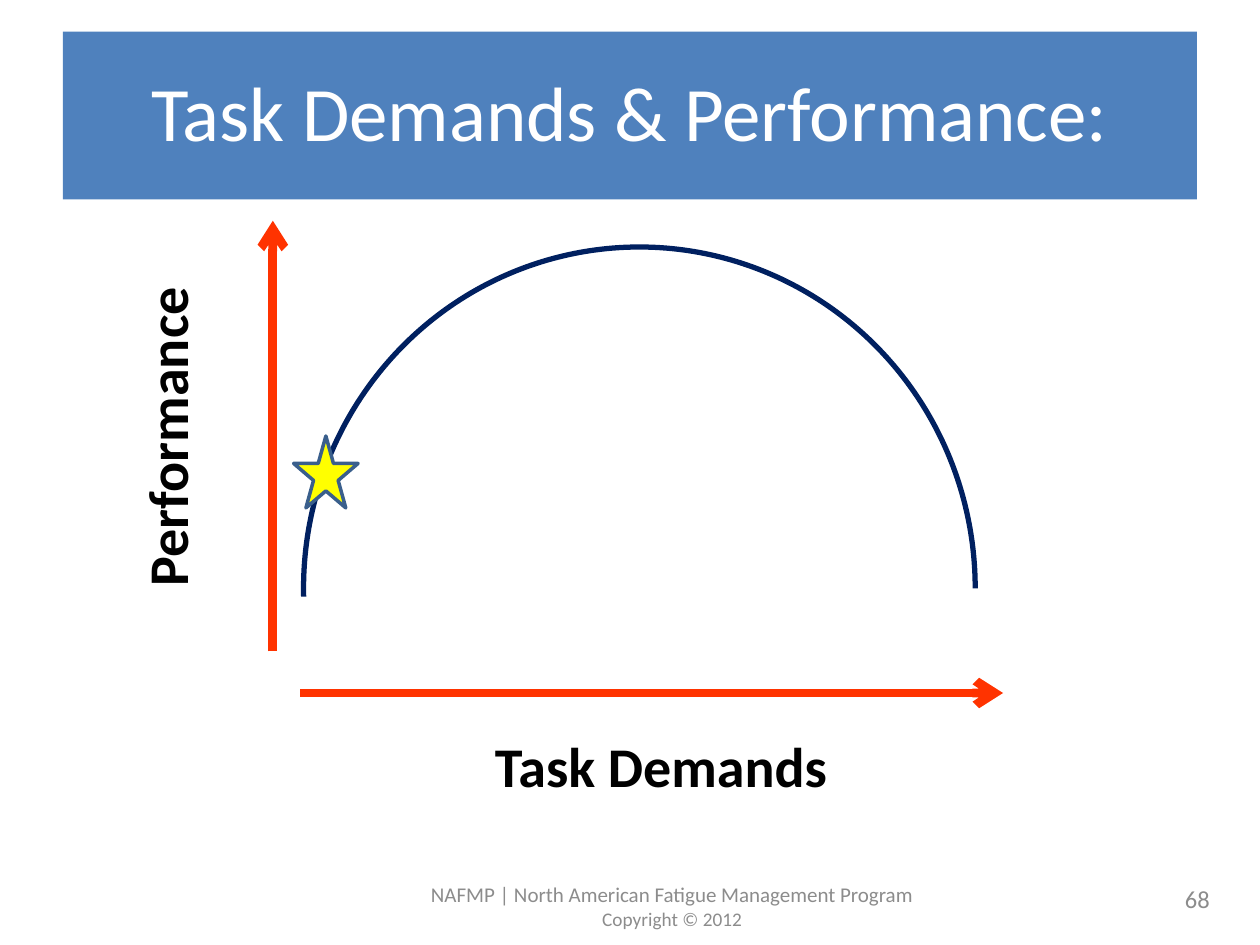
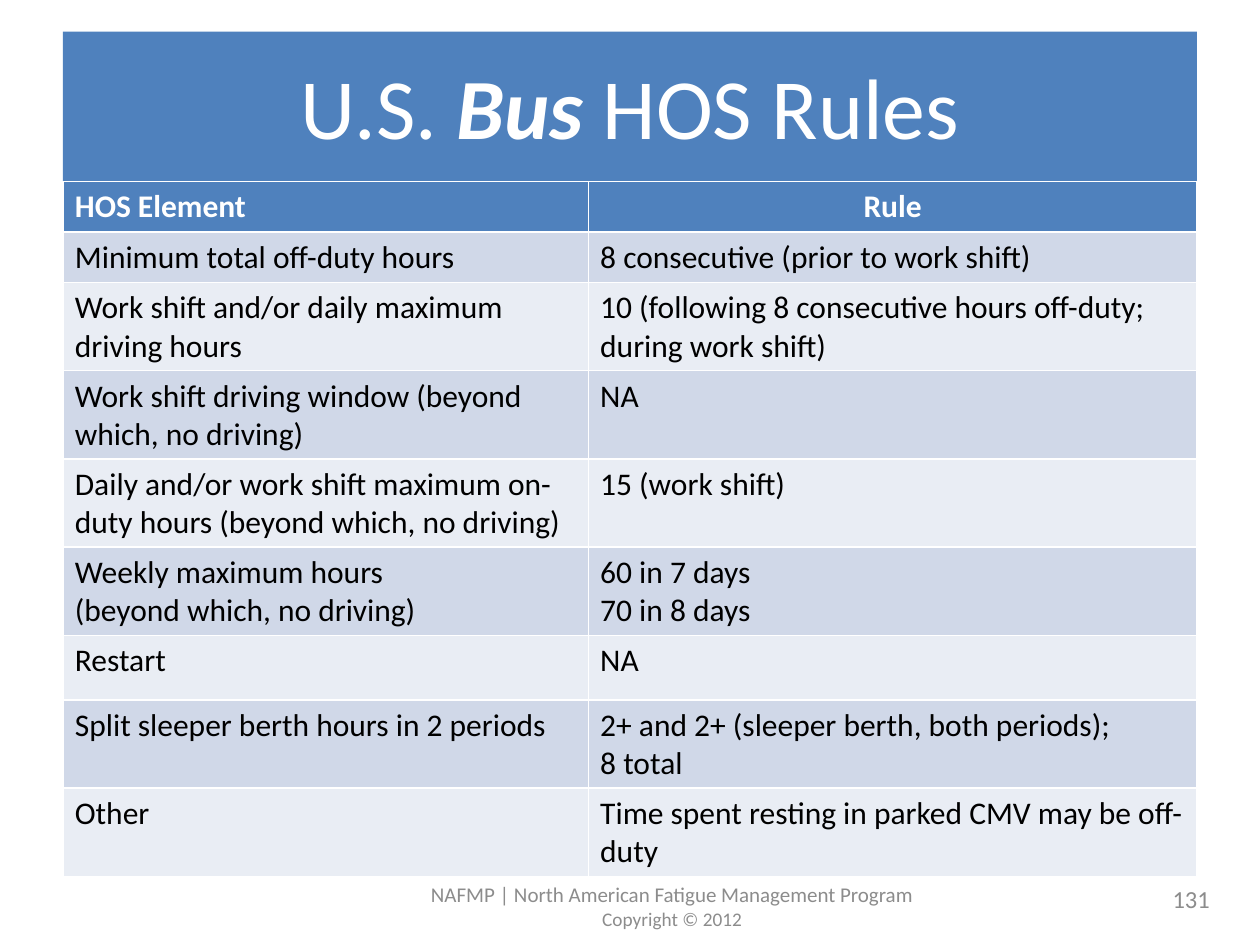
"""Build two fatigue management slides: a performance curve and a table of bus rules."""
from dataclasses import dataclass

from lxml.etree import SubElement
from pptx import Presentation
from pptx.dml.color import RGBColor
from pptx.enum.shapes import MSO_CONNECTOR, MSO_SHAPE
from pptx.enum.text import MSO_ANCHOR, PP_ALIGN
from pptx.oxml.ns import qn
from pptx.util import Cm, Pt


@dataclass(frozen=True)
class Theme:
    font: str = "Calibri"
    band: str = "4F81BD"
    white: str = "FFFFFF"
    black: str = "000000"
    grey: str = "8C8C8C"
    curve: str = "002060"
    axis: str = "FF3300"
    star: str = "FFFF00"
    star_edge: str = "3A5F8C"
    row_fills: tuple = ("D0D8E8", "E9EDF4")
    title_size: float = 44
    large_title_size: float = 49
    label_size: float = 32
    table_size: float = 18
    number_size: float = 14
    footer_size: float = 12
    copyright_size: float = 11
    title_leading: float = 45.8


THEME = Theme()
MARGIN = 1.27
CONTENT_WIDTH = 22.86
ONE_LINE, TALL_LINE, TWO_LINES = 0.97, 1.3, 1.7

BUS_RULES = [
    (ONE_LINE, "Minimum total off-duty hours", "8 consecutive (prior to work shift)"),
    (TWO_LINES, "Work shift and/or daily maximum driving hours",
     "10 (following 8 consecutive hours off-duty; during work shift)"),
    (TWO_LINES, "Work shift driving window (beyond which, no driving)", "NA"),
    (TWO_LINES, "Daily and/or work shift maximum on-duty hours (beyond which, no driving)",
     "15 (work shift)"),
    (TWO_LINES, "Weekly maximum hours\n(beyond which, no driving)", "60 in 7 days\n70 in 8 days"),
    (TALL_LINE, "Restart", "NA"),
    (TWO_LINES, "Split sleeper berth hours in 2 periods",
     "2+ and 2+ (sleeper berth, both periods);\n8 total"),
    (TWO_LINES, "Other", "Time spent resting in parked CMV may be off-duty"),
]


def color(code):
    return RGBColor.from_string(code)


def style_paragraph(paragraph, size, font_color, align=PP_ALIGN.LEFT, bold=False):
    paragraph.alignment = align
    font = paragraph.font
    font.name, font.size, font.bold = THEME.font, Pt(size), bold
    font.color.rgb = color(font_color)


def add_text(slide, box, text, size, font_color, align=PP_ALIGN.CENTER,
             anchor=MSO_ANCHOR.MIDDLE, bold=False):
    shape = slide.shapes.add_textbox(*map(Cm, box))
    frame = shape.text_frame
    frame.word_wrap = True
    frame.vertical_anchor = anchor
    frame.text = text
    for paragraph in frame.paragraphs:
        style_paragraph(paragraph, size, font_color, align, bold)
    return shape


def add_preset(slide, kind, box, fill=None, line=None, width=0):
    shape = slide.shapes.add_shape(kind, *map(Cm, box))
    shape.shadow.inherit = False
    if fill:
        shape.fill.solid()
        shape.fill.fore_color.rgb = color(fill)
    else:
        shape.fill.background()
    if line:
        shape.line.color.rgb = color(line)
        shape.line.width = Pt(width)
    else:
        shape.line.fill.background()
    return shape


def add_axis(slide, start, end):
    connector = slide.shapes.add_connector(MSO_CONNECTOR.STRAIGHT, *map(Cm, start + end))
    connector.line.color.rgb = color(THEME.axis)
    connector.line.width = Pt(5)
    properties = connector.element.spPr
    SubElement(properties.find(qn("a:ln")), qn("a:tailEnd"), type="arrow")
    SubElement(properties, qn("a:effectLst"))


def add_axis_label(slide, box, text, vertical=False):
    shape = add_text(slide, box, text, THEME.label_size, THEME.black,
                     anchor=MSO_ANCHOR.TOP, bold=True)
    if vertical:
        shape.element.txBody.bodyPr.set("vert", "vert270")


def add_base_slide(presentation, number):
    slide = presentation.slides.add_slide(presentation.slide_layouts[6])
    add_preset(slide, MSO_SHAPE.RECTANGLE, (MARGIN, 0.64, CONTENT_WIDTH, 3.38), THEME.band)
    footer = add_text(slide, (7.62, 17.78, 11.86, 0.97),
                      "NAFMP | North American Fatigue Management Program\nCopyright © 2012",
                      THEME.footer_size, THEME.grey)
    footer.text_frame.paragraphs[1].font.size = Pt(THEME.copyright_size)
    add_text(slide, (18.72, 17.6, 5.92, 1.02), str(number), THEME.number_size,
             THEME.grey, PP_ALIGN.RIGHT)
    return slide


def add_title(slide, text, size, emphasis=None):
    shape = add_text(slide, (MARGIN, 0.76, CONTENT_WIDTH, 3.18), "", size, THEME.white)
    paragraph = shape.text_frame.paragraphs[0]
    paragraph.line_spacing = Pt(THEME.title_leading)
    before, strong, after = text.partition(emphasis) if emphasis else (text, "", "")
    for part in filter(None, (before, strong, after)):
        run = paragraph.add_run()
        run.text = part
        if part == emphasis:
            run.font.bold = run.font.italic = True


def fill_cell(cell, text, fill, font_color, align=PP_ALIGN.LEFT, bold=False):
    cell.fill.solid()
    cell.fill.fore_color.rgb = color(fill)
    cell.margin_left = cell.margin_right = Cm(0.24)
    cell.text = text
    for paragraph in cell.text_frame.paragraphs:
        style_paragraph(paragraph, THEME.table_size, font_color, align, bold)


def add_rules_table(slide, top, column_widths, headings, rules):
    heights = [ONE_LINE] + [height for height, *_ in rules]
    frame = slide.shapes.add_table(len(heights), len(column_widths), Cm(MARGIN), Cm(top),
                                   Cm(sum(column_widths)), Cm(sum(heights)))
    table = frame.table
    for column, width in zip(table.columns, column_widths):
        column.width = Cm(width)
    for row, height in zip(table.rows, heights):
        row.height = Cm(height)
    for index, (heading, align) in enumerate(zip(headings, (PP_ALIGN.LEFT, PP_ALIGN.CENTER))):
        fill_cell(table.cell(0, index), heading, THEME.band, THEME.white, align, True)
    for row_index, (_, *texts) in enumerate(rules, start=1):
        fill = THEME.row_fills[(row_index - 1) % 2]
        for column_index, text in enumerate(texts):
            fill_cell(table.cell(row_index, column_index), text, fill, THEME.black)


def build_performance_slide(presentation):
    slide = add_base_slide(presentation, 68)
    curve = add_preset(slide, MSO_SHAPE.ARC, (6.12, 4.98, 13.54, 13.76),
                       line=THEME.curve, width=3)
    curve.adjustments[0] = 107.15
    curve.adjustments[1] = 0
    add_preset(slide, MSO_SHAPE.STAR_5_POINT, (5.92, 8.79, 1.3, 1.45),
               THEME.star, THEME.star_edge, 2)
    add_title(slide, "Task Demands & Performance:", THEME.title_size)
    add_axis(slide, (5.5, 13.13), (5.5, 4.45))
    add_axis(slide, (6.05, 13.97), (20.22, 13.97))
    add_axis_label(slide, (2.54, 4.78, 1.88, 8.05), "Performance", vertical=True)
    add_axis_label(slide, (7.4, 14.62, 11.86, 1.88), "Task Demands")


def build_bus_rules_slide(presentation):
    slide = add_base_slide(presentation, 131)
    add_title(slide, "U.S. Bus HOS Rules", THEME.large_title_size, emphasis="Bus")
    add_rules_table(slide, 3.66, (10.59, 12.27), ("HOS Element", "Rule"), BUS_RULES)


def main():
    presentation = Presentation()
    presentation.slide_width, presentation.slide_height = Cm(25.4), Cm(19.05)
    build_performance_slide(presentation)
    build_bus_rules_slide(presentation)
    presentation.save("out.pptx")


if __name__ == "__main__":
    main()
